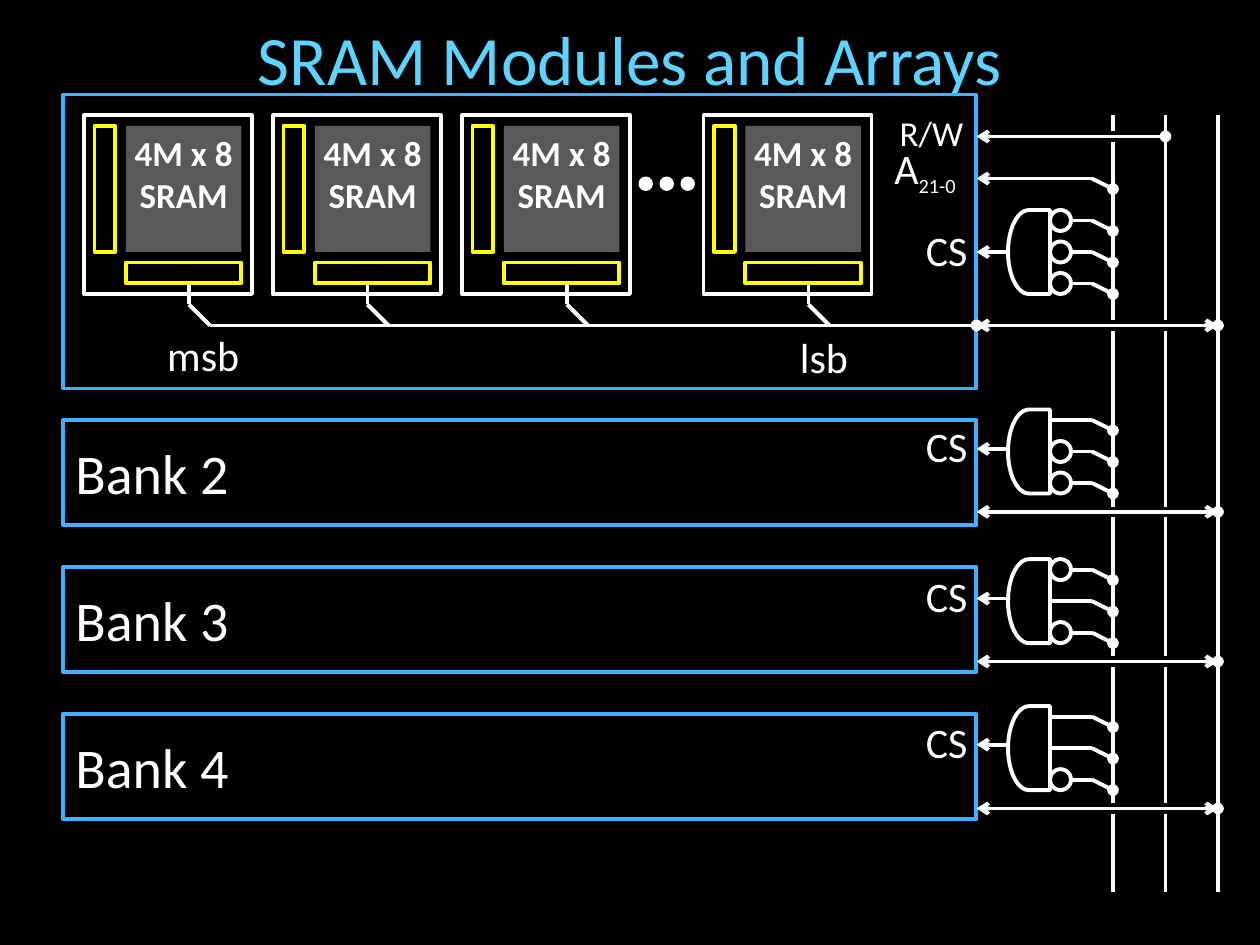
import pptx
import pptx.dml.color
import pptx.enum.shapes
import pptx.enum.text
import pptx.oxml
import pptx.oxml.ns
import pptx.util

Pt = pptx.util.Pt
SHAPE = pptx.enum.shapes.MSO_SHAPE
ALIGN = pptx.enum.text.PP_ALIGN
ANCHOR = pptx.enum.text.MSO_ANCHOR

WHITE, BLACK, YELLOW = "FFFFFF", "000000", "FFFF00"
BLUE, CYAN, GRAY = "40AFFF", "5DD4FF", "595959"


def rgb(value):
    return pptx.dml.color.RGBColor.from_string(value)


def write(p, text, size=24, color=WHITE, bold=False, align=ALIGN.LEFT, baseline=None):
    """Append text to a paragraph; a newline becomes a line break."""
    p.alignment = align
    for i, line in enumerate(text.split("\n")):
        if i:
            p.add_line_break()
        r = p.add_run()
        r.text = line
        r.font.name, r.font.size, r.font.bold = "Calibri", Pt(size), bold
        r.font.color.rgb = rgb(color)
        if baseline is not None:
            r.font._element.set("baseline", str(baseline * 1000))


class Diagram:
    def __init__(self, slide, weight=2.25):
        self.slide = slide
        self.weight = weight
        slide.background.fill.solid()
        slide.background.fill.fore_color.rgb = rgb(BLACK)

    def title(self, text, x, y, w, h):
        sp = self.slide.shapes.title
        sp.left, sp.top, sp.width, sp.height = Pt(x), Pt(y), Pt(w), Pt(h)
        tf = sp.text_frame
        tf.auto_size = pptx.enum.text.MSO_AUTO_SIZE.NONE
        tf.vertical_anchor = ANCHOR.MIDDLE
        write(tf.paragraphs[0], text, size=39.6, color=CYAN, align=ALIGN.CENTER)

    def shape(self, x, y, w, h, line=None, fill=None, kind=SHAPE.RECTANGLE):
        sp = self.slide.shapes.add_shape(kind, Pt(x), Pt(y), Pt(w), Pt(h))
        sp.shadow.inherit = False
        if fill:
            sp.fill.solid()
            sp.fill.fore_color.rgb = rgb(fill)
        else:
            sp.fill.background()
        if line:
            sp.line.color.rgb = rgb(line)
            sp.line.width = Pt(self.weight)
        else:
            sp.line.fill.background()
        return sp

    def label(self, text, x, y, w, h, inset=True, **fmt):
        sp = self.slide.shapes.add_textbox(Pt(x), Pt(y), Pt(w), Pt(h))
        tf = sp.text_frame
        tf.word_wrap = False
        if not inset:
            tf.margin_left = tf.margin_right = tf.margin_top = tf.margin_bottom = 0
        write(tf.paragraphs[0], text, **fmt)
        return tf.paragraphs[0]

    def line(self, x1, y1, x2, y2, color=WHITE, weight=None, head=None, tail=None):
        """Draw a line; head marks its start and tail its end."""
        c = self.slide.shapes.add_connector(
            pptx.enum.shapes.MSO_CONNECTOR.STRAIGHT, Pt(x1), Pt(y1), Pt(x2), Pt(y2))
        c.line.color.rgb = rgb(color)
        c.line.width = Pt(weight or self.weight)
        ln = c.line._get_or_add_ln()
        for tag, style in (("a:headEnd", head), ("a:tailEnd", tail)):
            if style:
                end = pptx.oxml.parse_xml(f"<{tag} {pptx.oxml.ns.nsdecls('a')}/>")
                end.set("type", style)
                ln.append(end)
        c._element.spPr.append(
            pptx.oxml.parse_xml(f"<a:effectLst {pptx.oxml.ns.nsdecls('a')}/>"))

    def bank(self, y, h, name=""):
        sp = self.shape(BANK_LEFT, y, BANK_RIGHT - BANK_LEFT, h, line=BLUE)
        if name:
            sp.text_frame.vertical_anchor = ANCHOR.MIDDLE
            write(sp.text_frame.paragraphs[0], name, size=32)

    def sram(self, x, output_x):
        """Draw one chip with its decoders and its tap on the data line."""
        self.shape(x + 24, 72, 66, 72, fill=GRAY)
        self.shape(x, 66, 96, 102, line=WHITE)
        self.shape(x + 24, 150, 66, 12, line=YELLOW)
        self.shape(x + 6, 72, 12, 72, line=YELLOW)
        self.label("4M x 8\nSRAM", x + 24, 75, 66, 51, inset=False,
                   size=20, bold=True, align=ALIGN.CENTER)
        self.line(output_x, 162, output_x, 174)
        self.line(output_x, 174, output_x + 12, DATA_Y)

    def tap(self, y):
        self.line(624, y, ADDRESS_X, y + 6, tail="oval")

    def chip_select(self, gate_y, select_y, inverted):
        """Draw a three-input gate, with a bubble on each inverted input."""
        self.label("CS", 522, select_y - 19.5, 39, 36)
        self.line(BANK_RIGHT, select_y, 576, select_y, head="arrow")
        gate = self.shape(576, gate_y, 24, 48, line=WHITE, kind=SHAPE.FLOWCHART_DELAY)
        gate.rotation = 180
        for i, bubble in enumerate(inverted):
            y = gate_y + 6 + 18 * i
            if bubble:
                self.shape(600, y - 6, 12, 12, line=WHITE,
                           kind=SHAPE.FLOWCHART_CONNECTOR)
            self.line(612 if bubble else 600, y, 624, y)
            self.tap(y)

    def crossing(self, x1, x2, y):
        """Break the buses behind a line that passes over them."""
        self.line(x1, y, x2, y, color=BLACK, weight=6)


BANK_LEFT, BANK_RIGHT = 36, 558
ADDRESS_X, CONTROL_X, DATA_X = 636, 666, 696
DATA_Y = 186
CHIPS = [(48, 108), (156, 210), (264, 324), (402, 462)]  # left edge, output
# bank top, height, name, gate top, select line, data line, inverted inputs
BANKS = [
    (54, 168, "", 120, 144, DATA_Y, (True, True, True)),
    (240, 60, "Bank 2", 234, 256.5, 292.5, (False, True, True)),
    (324, 60, "Bank 3", 319.5, 342, 378, (True, False, True)),
    (408, 60, "Bank 4", 403.5, 425.5, 462, (False, False, True)),
]


def main():
    prs = pptx.Presentation()
    prs.slide_width, prs.slide_height = Pt(720), Pt(540)
    d = Diagram(prs.slides.add_slide(prs.slide_layouts[5]))
    d.title("SRAM Modules and Arrays", 18, 12, 684, 42)

    for y, h, name, *_ in BANKS:
        d.bank(y, h, name)
    for x, output_x in CHIPS:
        d.sram(x, output_x)
    for i in range(3):
        d.shape(366 + 12 * i, 102, 6, 6, line=WHITE, fill=WHITE, kind=SHAPE.OVAL)
    d.line(120, DATA_Y, BANK_RIGHT, DATA_Y, tail="oval")
    d.label("msb", 88.5, 184.5, 56, 36)
    d.label("lsb", 450, 186, 42.5, 36)

    for x in (ADDRESS_X, CONTROL_X, DATA_X):
        d.line(x, 66, x, 510)

    d.label("R/W", 507, 60, 51, 31.5, size=20)
    d.crossing(600, 654, 78)
    d.line(BANK_RIGHT, 78, CONTROL_X, 78, head="arrow", tail="oval")
    p = d.label("A", 504, 78, 53, 36)
    write(p, "21-0", size=20, baseline=-25)
    d.line(BANK_RIGHT, 102, 624, 102, head="arrow")
    d.tap(102)

    for _, _, _, gate_y, select_y, data_y, inverted in BANKS:
        d.crossing(624, 678, data_y)
        d.line(BANK_RIGHT, data_y, DATA_X, data_y, head="arrow", tail="arrow")
        d.line(DATA_X, data_y - 0.5, DATA_X, data_y, tail="oval")
        d.chip_select(gate_y, select_y, inverted)

    prs.save("out.pptx")


if __name__ == "__main__":
    main()
